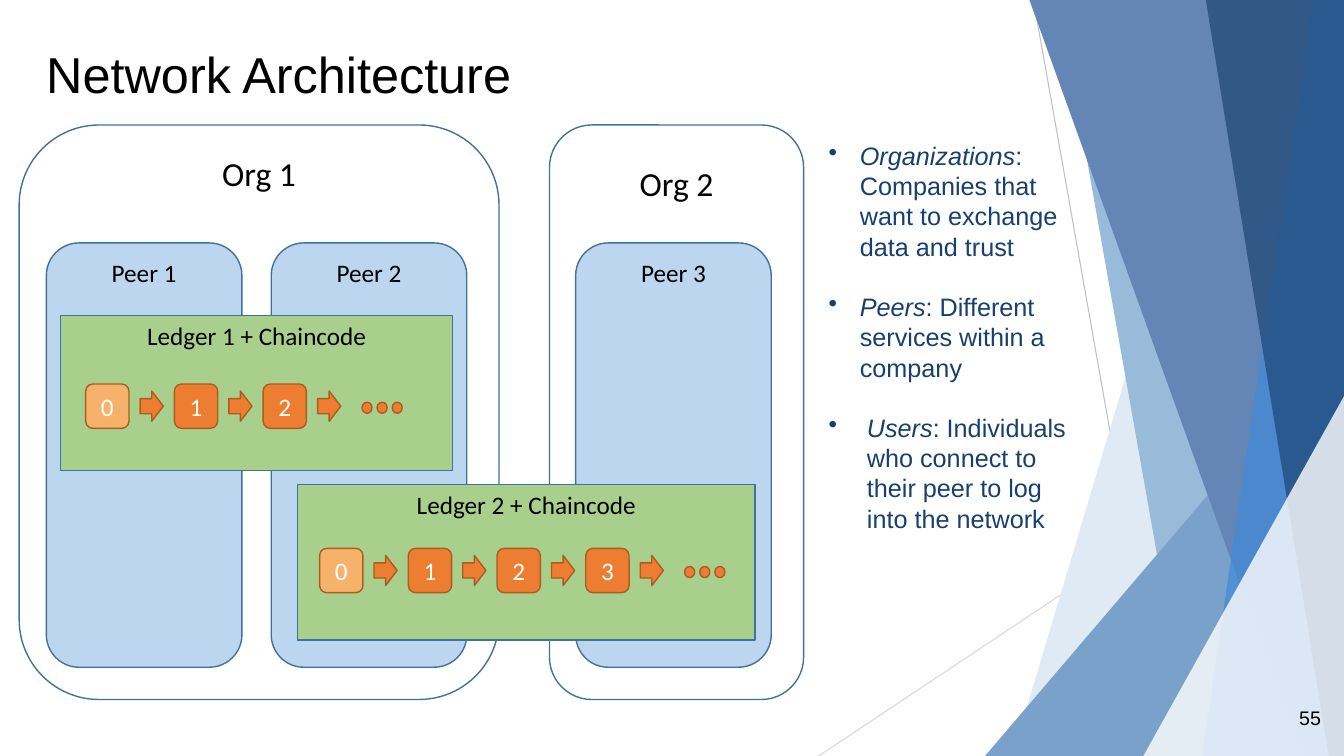
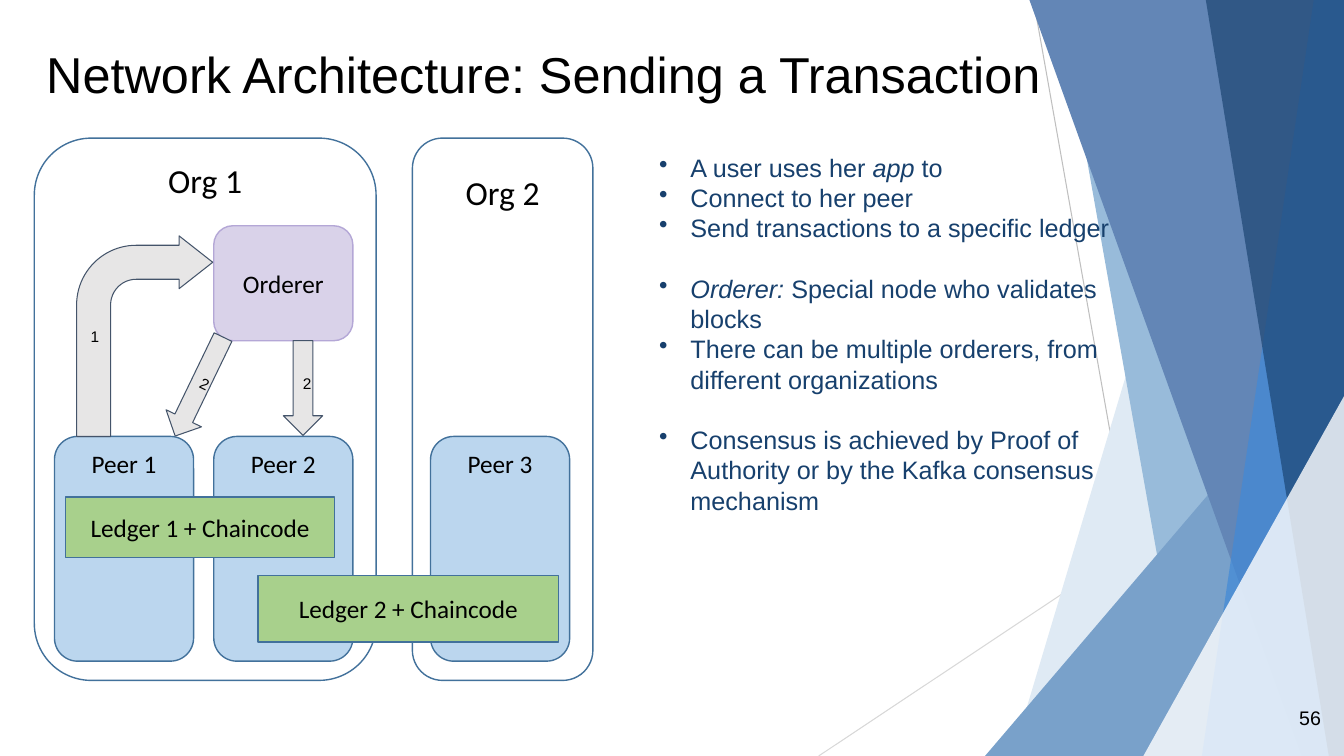
"""Build two slides on the architecture of a permissioned ledger network."""
from lxml import etree
from pptx import Presentation
from pptx import util as u
from pptx.dml.color import RGBColor
from pptx.enum import shapes, text
from pptx.oxml import ns

SHAPE = shapes.MSO_SHAPE
TOP, MIDDLE = text.MSO_ANCHOR.TOP, text.MSO_ANCHOR.MIDDLE
LEFT, CENTER, RIGHT = text.PP_ALIGN.LEFT, text.PP_ALIGN.CENTER, text.PP_ALIGN.RIGHT
WIDTH, HEIGHT = 13.33, 7.5

BLACK = RGBColor(0x00, 0x00, 0x00)
WHITE = RGBColor(0xFF, 0xFF, 0xFF)
NAVY = RGBColor(0x17, 0x40, 0x6D)
BRIGHT_BLUE = RGBColor(0x41, 0x8A, 0xD8)
SLATE_BLUE = RGBColor(0x63, 0x86, 0xB6)
MID_BLUE = RGBColor(0x79, 0xA1, 0xCA)
SKY_BLUE = RGBColor(0x98, 0xBB, 0xDA)
PALE_BLUE = RGBColor(0xDF, 0xEA, 0xF4)
LINE_GREY = RGBColor(0xBF, 0xBF, 0xBF)
LINE_PALE = RGBColor(0xD8, 0xD8, 0xD8)
OUTLINE = RGBColor(0x42, 0x71, 0x9B)
PEER = RGBColor(0xBB, 0xD6, 0xEE)
LEDGER = RGBColor(0xA8, 0xD0, 0x8C)
GENESIS = RGBColor(0xF6, 0xB2, 0x6B)
ORANGE = RGBColor(0xED, 0x7D, 0x31)
RUST = RGBColor(0xAC, 0x5B, 0x23)
LILAC = RGBColor(0xD9, 0xD2, 0xE9)
LILAC_LINE = RGBColor(0xB4, 0xA7, 0xD6)
ARROW = RGBColor(0xE7, 0xE6, 0xE6)
ARROW_LINE = RGBColor(0x44, 0x54, 0x6A)


def style_run(r, size, color, font="Arial", italic=False):
    """Set the look of one run."""
    r.font.name, r.font.size, r.font.italic = font, u.Pt(size), italic
    r.font.color.rgb = color


def set_frame(tf, x_inset, y_inset, anchor=TOP):
    """Set wrapping, insets and anchor of a text frame."""
    tf.word_wrap, tf.vertical_anchor = True, anchor
    tf.margin_left = tf.margin_right = u.Inches(x_inset)
    tf.margin_top = tf.margin_bottom = u.Inches(y_inset)


def paint(sp, fill=None, line=None, width=1, opacity=None):
    """Set fill, outline and opacity of a shape without a shadow."""
    sp.shadow.inherit = False
    if fill is None:
        sp.fill.background()
    else:
        sp.fill.solid()
        sp.fill.fore_color.rgb = fill
    if opacity is not None:
        clr = sp.fill._xPr.find(".//" + ns.qn("a:srgbClr"))
        etree.SubElement(clr, ns.qn("a:alpha")).set("val", str(opacity * 1000))
    if line is None:
        sp.line.fill.background()
    else:
        sp.line.color.rgb, sp.line.width = line, u.Pt(width)


def add_shape(s, kind, box, fill=None, line=None, width=1, opacity=None):
    """Add a painted preset shape in a box given in inches."""
    sp = s.shapes.add_shape(kind, *map(u.Inches, box))
    paint(sp, fill, line, width, opacity)
    return sp


def label(sp, words, size=18, color=BLACK, font="Calibri", anchor=TOP,
          align=CENTER, y_inset=0.05):
    """Write one line of text in a shape."""
    tf = sp.text_frame
    set_frame(tf, 0.1, y_inset, anchor)
    tf.text = words
    p = tf.paragraphs[0]
    p.alignment = align
    style_run(p.runs[0], size, color, font)
    return p


def add_line(s, start, end, color):
    """Add a thin straight line."""
    c = s.shapes.add_connector(shapes.MSO_CONNECTOR.STRAIGHT,
                               *map(u.Inches, start + end))
    c.line.color.rgb, c.line.width = color, u.Pt(0.75)
    etree.SubElement(c._element.spPr, ns.qn("a:effectLst"))


def shard(s, top, bottom, fill, opacity=None):
    """Add a band from a slanted left edge to the right slide edge."""
    corners = [(top, 0), (WIDTH, 0), (WIDTH, HEIGHT), (bottom, HEIGHT)]
    points = [(u.Inches(x), u.Inches(y)) for x, y in corners]
    fb = s.shapes.build_freeform(*points[0])
    fb.add_line_segments(points[1:], close=True)
    paint(fb.convert_to_shape(), fill, opacity=opacity)


def corner_triangle(s, left, top, fill, opacity=None):
    """Add a right triangle in the lower right slide corner."""
    box = (left, top, WIDTH - left, HEIGHT - top)
    sp = add_shape(s, SHAPE.ISOSCELES_TRIANGLE, box, fill, opacity=opacity)
    sp.adjustments[0] = 1


def backdrop(s):
    """Draw the faceted decoration on the right."""
    add_line(s, (10.25, 0), (11.58, HEIGHT), LINE_GREY)
    add_line(s, (WIDTH, 4.03), (8.12, HEIGHT), LINE_PALE)
    shard(s, 12.28, 10.04, PALE_BLUE)
    shard(s, 10.5, 11.83, SKY_BLUE)
    corner_triangle(s, 9.77, 3.33, MID_BLUE)
    shard(s, 10.21, 12.91, SLATE_BLUE)
    shard(s, 13.03, 11.92, BRIGHT_BLUE, 70)
    shard(s, 11.96, 13.18, NAVY, 65)
    corner_triangle(s, 11.34, 3.93, WHITE, 80)


def base_slide(prs, title, number):
    """Add a blank slide with backdrop, title and slide number."""
    s = prs.slides.add_slide(prs.slide_layouts[6])
    backdrop(s)
    tb = s.shapes.add_textbox(*map(u.Inches, (10.2, 6.95, 3, 0.4)))
    label(tb, str(number), 14, font="Arial", align=RIGHT)
    tb = s.shapes.add_textbox(*map(u.Inches, (0.36, 0.33, 11.92, 0.93)))
    p = label(tb, title, 36, font="Arial", align=LEFT, y_inset=0.1)
    p.line_spacing = u.Pt(43.2)
    return s


def bullet_list(s, box, items):
    """Write bullets, each a gap flag, an indent and (words, italic) runs."""
    tf = s.shapes.add_textbox(*map(u.Inches, box)).text_frame
    set_frame(tf, 0.1, 0.1)
    for i, (gap, indent, parts) in enumerate(items):
        p = tf.add_paragraph() if i else tf.paragraphs[0]
        pPr = p._p.get_or_add_pPr()
        pPr.set("marL", str(u.Inches(indent)))
        pPr.set("indent", str(-u.Inches(indent)))
        etree.SubElement(pPr, ns.qn("a:buChar")).set("char", "•")
        p.line_spacing = u.Pt(21.6)
        p.space_before = u.Pt(21.6 if gap else 0)
        for words, italic in parts:
            r = p.add_run()
            r.text = words
            style_run(r, 18, NAVY, italic=italic)


def network(s, orgs, peers, ledgers, ledger_anchor=TOP):
    """Draw organizations, their peers and the ledgers across them."""
    for number, box in ((2, orgs[1]), (1, orgs[0])):
        sp = add_shape(s, SHAPE.ROUNDED_RECTANGLE, box, line=OUTLINE)
        p = label(sp, f"Org {number}", 24)
        if number == 2:
            p.line_spacing = 1.5
    lefts, peer_box = peers
    for i, left in enumerate(lefts, 1):
        sp = add_shape(s, SHAPE.ROUNDED_RECTANGLE, (left, *peer_box), PEER, OUTLINE)
        label(sp, f"Peer {i}")
    for i, box in enumerate(ledgers, 1):
        sp = add_shape(s, SHAPE.RECTANGLE, box, LEDGER, OUTLINE)
        label(sp, f"Ledger {i} + Chaincode", anchor=ledger_anchor)


def block_chain(s, left, top, count):
    """Draw numbered blocks, each followed by an arrow, and three dots."""
    pitch = 0.88
    for i in range(count):
        x = left + i * pitch
        sp = add_shape(s, SHAPE.ROUNDED_RECTANGLE, (x, top, 0.43, 0.44),
                       ORANGE if i else GENESIS, RUST)
        label(sp, str(i), color=WHITE, anchor=MIDDLE)
        add_shape(s, SHAPE.RIGHT_ARROW, (x + 0.54, top + 0.07, 0.23, 0.3), ORANGE, RUST)
    for i in range(3):
        x = left + count * pitch + 0.1 + i * 0.15
        add_shape(s, SHAPE.OVAL, (x, top + 0.18, 0.1, 0.11), ORANGE, RUST)


def step_arrow(s, kind, box, step, align=LEFT, rotation=0):
    """Add a grey arrow with its step number."""
    sp = add_shape(s, kind, box, ARROW, ARROW_LINE, 0.75)
    sp.rotation = rotation
    label(sp, step, 11, font="Arial", anchor=MIDDLE, align=align, y_inset=0.1)
    return sp


def orderer_flow(s, left, top):
    """Draw the orderer and the numbered steps to and from it."""
    sp = add_shape(s, SHAPE.ROUNDED_RECTANGLE, (left, top, 1.38, 1.14), LILAC, LILAC_LINE)
    label(sp, "Orderer", anchor=MIDDLE)
    sp = step_arrow(s, SHAPE.BENT_ARROW, (left - 1.36, top + 0.1, 1.35, 1.99), "1")
    sp.text_frame.margin_left = u.Inches(0.14)
    for i, value in enumerate((0.25, 0.194, 0.247, 0.438)):
        sp.adjustments[i] = value
    step_arrow(s, SHAPE.DOWN_ARROW, (left + 0.69, top + 1.14, 0.39, 0.94), "2")
    step_arrow(s, SHAPE.DOWN_ARROW, (left - 0.34, top + 1.05, 0.39, 1.09), "2",
               CENTER, 25.8)


def architecture_slide(prs):
    """Build the slide on organizations, peers and ledgers."""
    s = base_slide(prs, "Network Architecture", 55)
    network(s, [(0.19, 1.24, 4.76, 5.7), (5.45, 1.24, 2.52, 5.7)],
            ((0.46, 2.69, 5.71), (2.41, 1.94, 4.21)),
            [(0.6, 3.13, 3.89, 1.54), (2.95, 4.81, 4.54, 1.54)])
    block_chain(s, 0.85, 3.81, 3)
    block_chain(s, 3.17, 5.44, 4)
    bullet_list(s, (8.12, 1.29, 2.75, 5.59), [
        (False, 0.31, [("Organizations", True),
                       (": Companies that want to exchange data and trust", False)]),
        (True, 0.31, [("Peers", True), (": Different services within a company", False)]),
        (True, 0.38, [("Users", True),
                      (": Individuals who connect to their peer to log into the network",
                       False)]),
    ])


def transaction_slide(prs):
    """Build the slide on sending a transaction through the orderer."""
    s = base_slide(prs, "Network Architecture: Sending a Transaction", 56)
    network(s, [(0.34, 1.37, 3.39, 5.38), (4.09, 1.37, 1.79, 5.38)],
            ((0.54, 2.12, 4.27), (4.33, 1.38, 2.23)),
            [(0.65, 4.93, 2.67, 0.6), (2.56, 5.71, 2.98, 0.66)], MIDDLE)
    bullet_list(s, (6.44, 1.41, 4.97, 5.59), [
        (False, 0.31, [("A user uses her ", False), ("app", True), (" to", False)]),
        (False, 0.31, [("Connect to her peer", False)]),
        (False, 0.31, [("Send transactions to a specific ledger", False)]),
        (True, 0.31, [("Orderer: ", True), ("Special node who validates blocks", False)]),
        (False, 0.31, [("There can be multiple orderers, from different organizations",
                        False)]),
        (True, 0.31, [("Consensus is achieved by Proof of Authority or by the Kafka "
                       "consensus mechanism", False)]),
    ])
    orderer_flow(s, 2.12, 2.24)


def main():
    """Build and save the presentation."""
    prs = Presentation()
    prs.slide_width, prs.slide_height = u.Inches(WIDTH), u.Inches(HEIGHT)
    architecture_slide(prs)
    transaction_slide(prs)
    prs.save("out.pptx")


if __name__ == "__main__":
    main()
